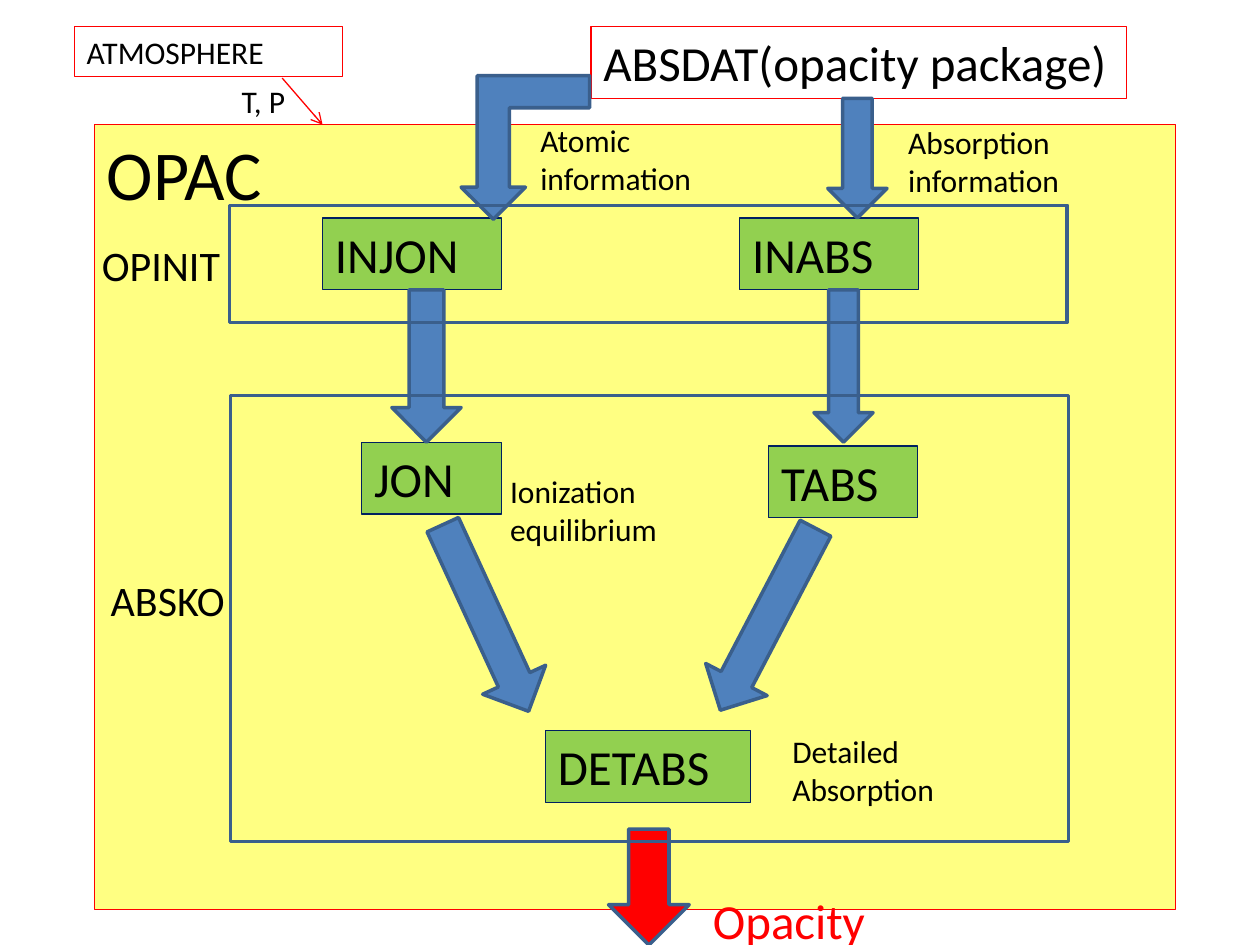
import pptx
import pptx.util
import pptx.dml.color
import pptx.enum.shapes
import pptx.enum.text
import pptx.oxml.ns
from lxml import etree

SHAPES = pptx.enum.shapes.MSO_SHAPE
BLACK, RED, YELLOW = "000000", "FF0000", "FFFF00"
GREEN, NAVY, BLUE, STEEL = "92D050", "002060", "4F81BD", "3A5F8C"
BOX_HEIGHT, LABEL_WIDTH, LABEL_HEIGHT = 0.57, 1.77, 0.71

# Content: left, top, width, height in inches
PACKAGE = ("OPAC", 0.75, 0.99, 8.58, 6.23)
INPUTS = [  # text, place, size
    ("ABSDAT(opacity package)", (4.69, 0.21, 4.25, BOX_HEIGHT), 28),
    ("ATMOSPHERE", (0.59, 0.21, 2.13, 0.4), 18),
]
ROUTINES = [  # text, left, top, width
    ("INJON", 2.56, 1.73, 1.42),
    ("INABS", 5.87, 1.73, 1.42),
    ("JON", 2.87, 3.51, 1.11),
    ("TABS", 6.1, 3.54, 1.18),
    ("DETABS", 4.33, 5.8, 1.63),
]
FLOWS = [  # place, rotation, fill
    ((6.57, 0.78, 0.47, 0.95), 0, BLUE),
    ((3.11, 2.3, 0.55, 1.21), 0, BLUE),
    ((6.46, 2.3, 0.47, 1.21), 0, BLUE),
    ((3.58, 4.09, 0.55, 1.63), 335.3, BLUE),
    ((5.82, 4.1, 0.55, 1.63), 27.6, BLUE),
    ((4.83, 6.58, 0.64, 0.92), 0, RED),
]
ATOMIC_FLOW = (3.66, 0.6, 1.02, 1.14)
STAGES = [(1.83, 3.14, 6.65, 3.54), (1.82, 1.63, 6.65, 0.93)]
NOTES = [  # text, left, top
    ("Atomic\ninformation", 4.19, 0.91),
    ("Absorption\ninformation", 7.11, 0.93),
    ("Ionization equilibrium", 3.95, 3.7),
    ("Detailed Absorption", 6.19, 5.76),
]
LABELS = [  # text, place, size, colour
    ("OPINIT", (0.71, 1.85, 1.42, 0.5), 24, BLACK),
    ("ABSKO", (0.78, 4.51, 1.18, 0.5), 24, BLACK),
    ("T, P", (1.82, 0.6, 0.58, 0.4), 18, BLACK),
    ("Opacity", (5.56, 7.02, 2.51, BOX_HEIGHT), 28, RED),
]
STATE_LINE = (2.24, 0.62, 2.56, 0.99)

deck = pptx.Presentation()
deck.slide_width, deck.slide_height = pptx.util.Inches(10), pptx.util.Inches(7.5)
slide = deck.slides.add_slide(deck.slide_layouts[6])


def inches(lengths):
    return [pptx.util.Inches(length) for length in lengths]


def rgb(colour):
    return pptx.dml.color.RGBColor.from_string(colour)


def write(holder, text, size=18, colour=BLACK):
    frame = holder.text_frame
    frame.text = text
    frame.word_wrap = True
    frame.auto_size = pptx.enum.text.MSO_AUTO_SIZE.SHAPE_TO_FIT_TEXT
    frame.vertical_anchor = pptx.enum.text.MSO_ANCHOR.TOP
    for paragraph in frame.paragraphs:
        paragraph.alignment = pptx.enum.text.PP_ALIGN.LEFT
        for run in paragraph.runs:
            run.font.name = "Calibri"
            run.font.size = pptx.util.Pt(size)
            run.font.color.rgb = rgb(colour)


def draw(kind, place, fill=None, line=STEEL, weight=2, rotation=0):
    shape = slide.shapes.add_shape(kind, *inches(place))
    shape.shadow.inherit = False
    shape.rotation = rotation
    if fill:
        shape.fill.solid()
        shape.fill.fore_color.rgb = rgb(fill)
    else:
        shape.fill.background()
    shape.line.color.rgb = rgb(line)
    shape.line.width = pptx.util.Pt(weight)
    return shape


def label(text, place, **style):
    write(slide.shapes.add_textbox(*inches(place)), text, **style)


def add_tag(parent, tag, **attributes):
    return etree.SubElement(parent, pptx.oxml.ns.qn(tag), **attributes)


# Package background, half transparent
name, *place = PACKAGE
package = draw(SHAPES.RECTANGLE, place, YELLOW, RED, 0.75)
write(package, name, size=40)
fill_colour = package.fill._xPr.find(".//" + pptx.oxml.ns.qn("a:srgbClr"))
add_tag(fill_colour, "a:alpha", val="49000")

# Inputs and routines
for text, place, size in INPUTS:
    write(draw(SHAPES.RECTANGLE, place, line=RED, weight=0.75), text, size=size)
for text, left, top, width in ROUTINES:
    routine = draw(SHAPES.RECTANGLE, (left, top, width, BOX_HEIGHT), GREEN, NAVY, 0.75)
    write(routine, text, size=28)

# Block arrows, then the stage frames over them
draw(SHAPES.BENT_UP_ARROW, ATOMIC_FLOW, BLUE, rotation=180)
for place, rotation, fill in FLOWS:
    draw(SHAPES.DOWN_ARROW, place, fill, rotation=rotation)
for place in STAGES:
    draw(SHAPES.RECTANGLE, place)

# Arrow from the atmosphere into the package
state = slide.shapes.add_connector(
    pptx.enum.shapes.MSO_CONNECTOR.STRAIGHT, *inches(STATE_LINE))
state.line.color.rgb = rgb(RED)
state.line.width = pptx.util.Pt(0.75)
add_tag(state.line._get_or_add_ln(), "a:tailEnd", type="arrow")
add_tag(state._element.spPr, "a:effectLst")

# Notes and labels
for text, left, top in NOTES:
    label(text, (left, top, LABEL_WIDTH, LABEL_HEIGHT))
for text, place, size, colour in LABELS:
    label(text, place, size=size, colour=colour)

deck.save("out.pptx")
